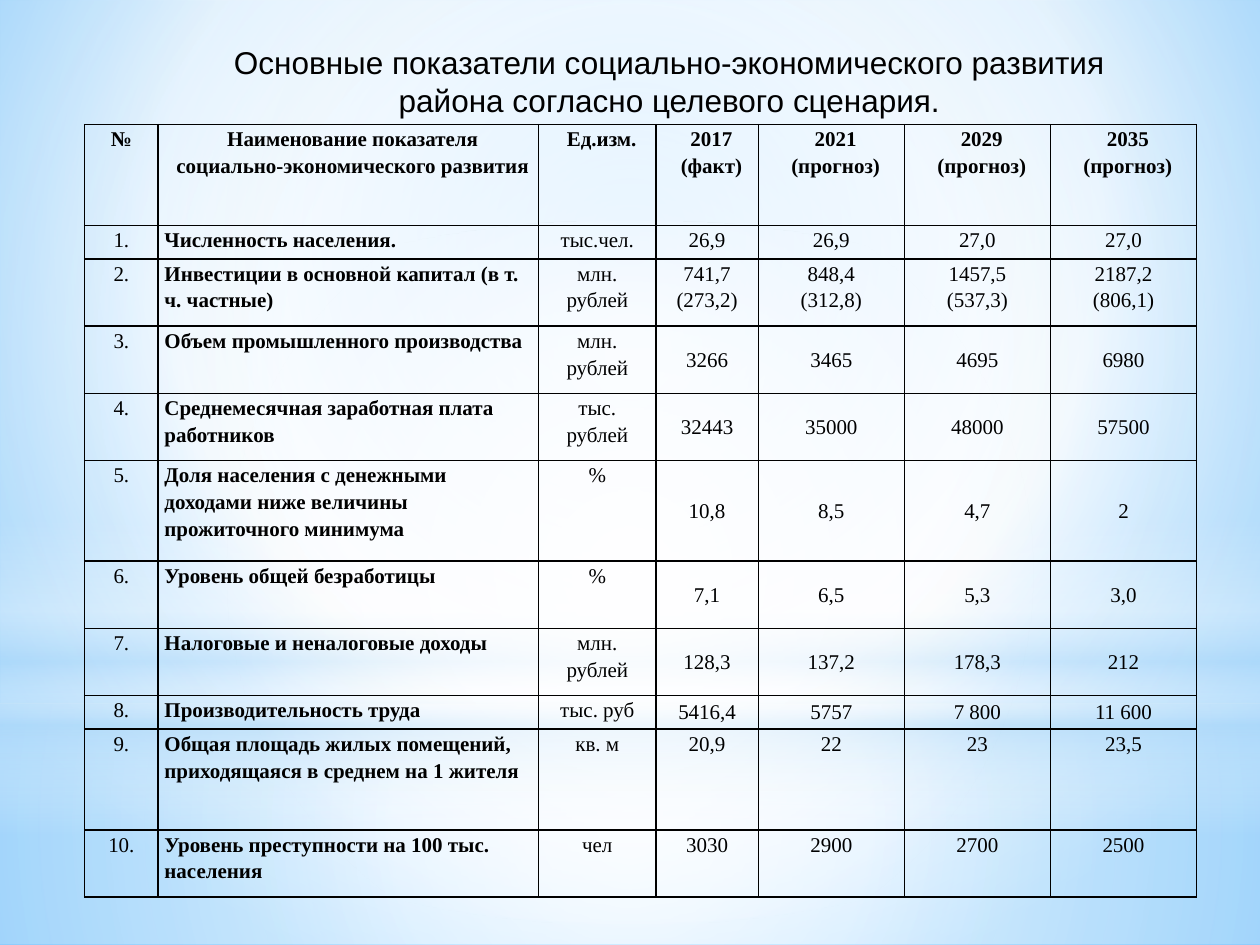
from lxml import etree
from pptx import Presentation
from pptx.dml.color import RGBColor
from pptx.enum.shapes import MSO_SHAPE
from pptx.enum.text import MSO_ANCHOR, MSO_AUTO_SIZE, PP_ALIGN
from pptx.oxml.ns import nsdecls
from pptx.util import Pt

LEFT, CENTER = PP_ALIGN.LEFT, PP_ALIGN.CENTER
TOP, MIDDLE = MSO_ANCHOR.TOP, MSO_ANCHOR.MIDDLE
RECT, OVAL = MSO_SHAPE.RECTANGLE, MSO_SHAPE.OVAL
FIT_SHAPE = MSO_AUTO_SIZE.SHAPE_TO_FIT_TEXT

BLACK, WHITE, PALE = "000000", "FFFFFF", "B4DCFA"
CENTRE = (50, 50, 50, 50)
LINE_H = 19.2
COL_WIDTHS = [42, 217.5, 67, 58.5, 83.5, 83.5, 83.5]
HEADER = ["№", "Наименование показателя социально-экономического развития", "Ед.изм.",
          "2017\n(факт)", "2021\n(прогноз)", "2029\n(прогноз)", "2035\n(прогноз)"]
# Name, unit, four values, height in lines
INDICATORS = [
    ("Численность населения.", "тыс.чел.", ["26,9", "26,9", "27,0", "27,0"], 1),
    ("Инвестиции в основной капитал (в т. ч. частные)", "млн. рублей",
     ["741,7\n(273,2)", "848,4\n(312,8)", "1457,5\n(537,3)", "2187,2\n(806,1)"], 2),
    ("Объем промышленного производства", "млн. рублей", ["3266", "3465", "4695", "6980"], 2),
    ("Среднемесячная заработная плата работников", "тыс. рублей",
     ["32443", "35000", "48000", "57500"], 2),
    ("Доля населения с денежными доходами ниже величины прожиточного минимума", "%",
     ["10,8", "8,5", "4,7", "2"], 3),
    ("Уровень общей безработицы", "%", ["7,1", "6,5", "5,3", "3,0"], 2),
    ("Налоговые и неналоговые доходы", "млн. рублей", ["128,3", "137,2", "178,3", "212"], 2),
    ("Производительность труда", "тыс. руб", ["5416,4", "5757", "7 800", "11 600"], 1),
    ("Общая площадь жилых помещений, приходящаяся в среднем на 1 жителя", "кв. м",
     ["20,9", "22", "23", "23,5"], 3),
    ("Уровень преступности на 100 тыс. населения", "чел", ["3030", "2900", "2700", "2500"], 2),
]
MIDDLE_ROWS = range(3, 9)


def rgb(color):
    return RGBColor.from_string(color)


def set_gradient(fill, element, stops, focus=None):
    """Fill with (position, colour, opacity) stops: circular around focus, else downwards."""
    fill.solid()
    gs = "".join(f'<a:gs pos="{pos * 1000}"><a:srgbClr val="{color}">'
                 f'<a:alpha val="{opacity * 1000}"/></a:srgbClr></a:gs>'
                 for pos, color, opacity in stops)
    if focus:
        l, t, r, b = (v * 1000 for v in focus)
        shade = (f'<a:path path="circle"><a:fillToRect l="{l}" t="{t}" r="{r}" b="{b}"/>'
                 '</a:path>')
    else:
        shade = '<a:lin ang="5400000" scaled="0"/>'
    solid = element.xpath(".//a:solidFill")[0]
    solid.getparent().replace(solid, etree.fromstring(
        f'<a:gradFill {nsdecls("a")} rotWithShape="1"><a:gsLst>{gs}</a:gsLst>{shade}</a:gradFill>'))


def add_glow(s, kind, top, height, stops, focus=CENTRE):
    sp = s.shapes.add_shape(kind, 0, Pt(top), Pt(720), Pt(height))
    sp.shadow.inherit = False
    sp.line.fill.background()
    set_gradient(sp.fill, sp._element.spPr, stops, focus)


def write_text(tf, text, *, font="Times New Roman", size=12, bold=False, align=CENTER,
               spacing=1.0, indent=0):
    for i, line in enumerate(text.split("\n")):
        p = tf.add_paragraph() if i else tf.paragraphs[0]
        p.alignment = align
        p.line_spacing = spacing
        if indent:
            p._p.get_or_add_pPr().set("marL", str(Pt(indent)))
        r = p.add_run()
        r.text = line
        r.font.name, r.font.size, r.font.bold = font, Pt(size), bold
        r.font.color.rgb = rgb(BLACK)


def add_borders(cell):
    tcPr = cell._tc.get_or_add_tcPr()
    for side in "LRTB":
        tcPr.append(etree.fromstring(
            f'<a:ln{side} {nsdecls("a")} w="{Pt(1)}"><a:solidFill>'
            f'<a:srgbClr val="{BLACK}"/></a:solidFill></a:ln{side}>'))


def fill_cell(cell, text, *, anchor=TOP, side=3.6, top=0, **fmt):
    add_borders(cell)
    cell.fill.background()
    cell.vertical_anchor = anchor
    cell.margin_left = cell.margin_right = Pt(side)
    cell.margin_top, cell.margin_bottom = Pt(top), 0
    write_text(cell.text_frame, text, **fmt)


def add_backdrop(s):
    set_gradient(s.background.fill, s._element,
                 [(0, "9ED5FF", 100), (60, WHITE, 100), (100, "5BB9FF", 100)], (20, 10, 20, 60))
    add_glow(s, RECT, 402, 138, [(0, WHITE, 91), (37, WHITE, 76), (100, PALE, 79)])
    add_glow(s, RECT, 0, 402, [(0, WHITE, 89), (48, WHITE, 62), (100, PALE, 79)])
    add_glow(s, RECT, 297, 180, [(0, WHITE, 0), (29, WHITE, 30), (45, PALE, 40),
                                 (55, WHITE, 26), (65, PALE, 60), (100, WHITE, 0)], None)
    add_glow(s, OVAL, 126, 402, [(0, WHITE, 100), (56, WHITE, 0)])


def add_title(s, text):
    sp = s.shapes.title
    s.shapes._spTree.append(sp._element)  # above the backdrop
    sp.left, sp.top, sp.width, sp.height = Pt(116), Pt(21), Pt(533), Pt(51)
    tf = sp.text_frame
    tf.word_wrap, tf.auto_size, tf.vertical_anchor = True, FIT_SHAPE, TOP
    write_text(tf, text, font="Arial", size=18)


def add_indicator_table(s):
    heights = [3] + [row[-1] for row in INDICATORS]
    table = s.shapes.add_table(len(heights), len(COL_WIDTHS), Pt(48.4), Pt(71.2),
                               Pt(sum(COL_WIDTHS)), Pt(sum(heights) * LINE_H)).table
    table.first_row = table.horz_banding = False
    for col, width in zip(table.columns, COL_WIDTHS):
        col.width = Pt(width)
    for row, lines in zip(table.rows, heights):
        row.height = Pt(lines * LINE_H)

    for c, text in enumerate(HEADER):
        fill_cell(table.cell(0, c), text, bold=True, spacing=1.15, indent=5 if c else 0)
    for n, (name, unit, values, _) in enumerate(INDICATORS, 1):
        fill_cell(table.cell(n, 0), f"{n}.", spacing=1.15)
        fill_cell(table.cell(n, 1), name, bold=True, align=LEFT, spacing=1.15)
        fill_cell(table.cell(n, 2), unit, spacing=1.15)
        fmt = dict(anchor=MIDDLE, side=0.7, top=0.7) if n in MIDDLE_ROWS else dict(spacing=1.15)
        for c, value in enumerate(values, 3):
            fill_cell(table.cell(n, c), value, **fmt)


def main():
    prs = Presentation()
    prs.slide_width, prs.slide_height = Pt(720), Pt(540)
    s = prs.slides.add_slide(prs.slide_layouts[5])
    add_backdrop(s)
    add_title(s, "Основные показатели социально-экономического развития "
                 "района согласно целевого сценария.")
    add_indicator_table(s)
    prs.save("out.pptx")


if __name__ == "__main__":
    main()
